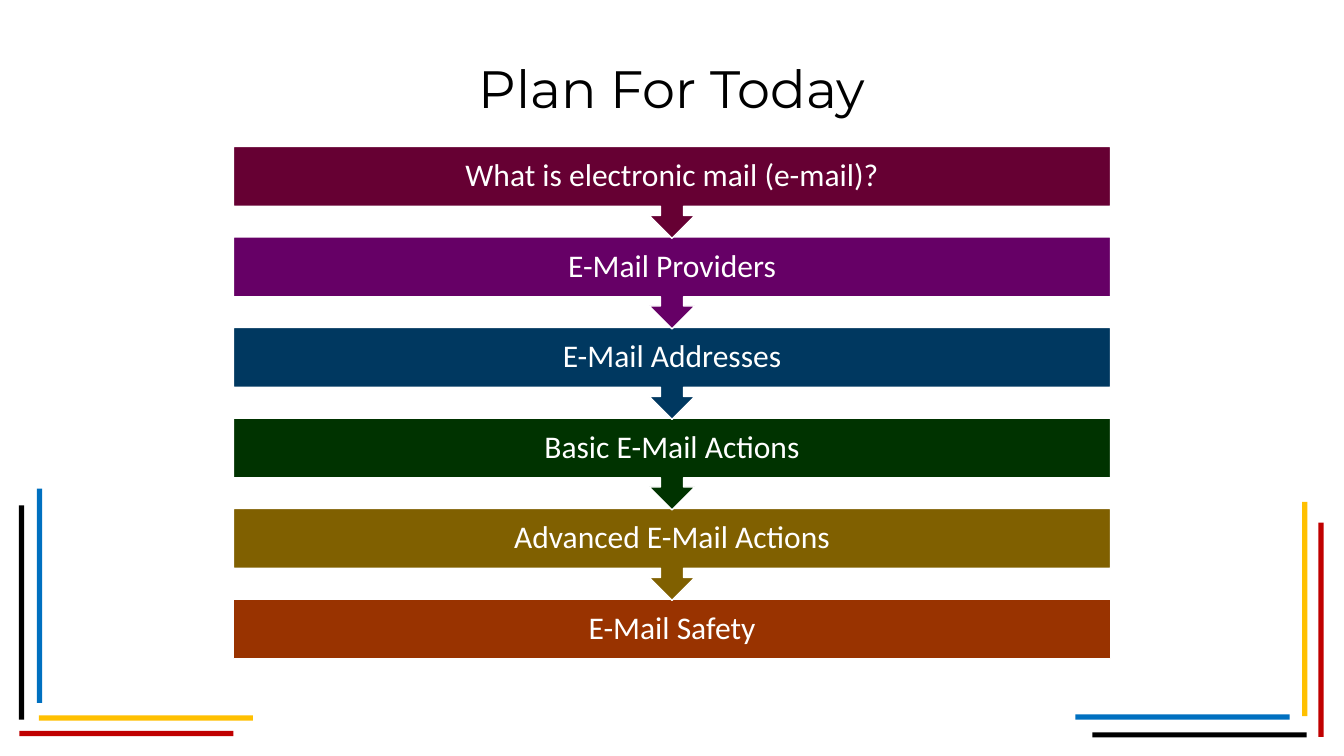
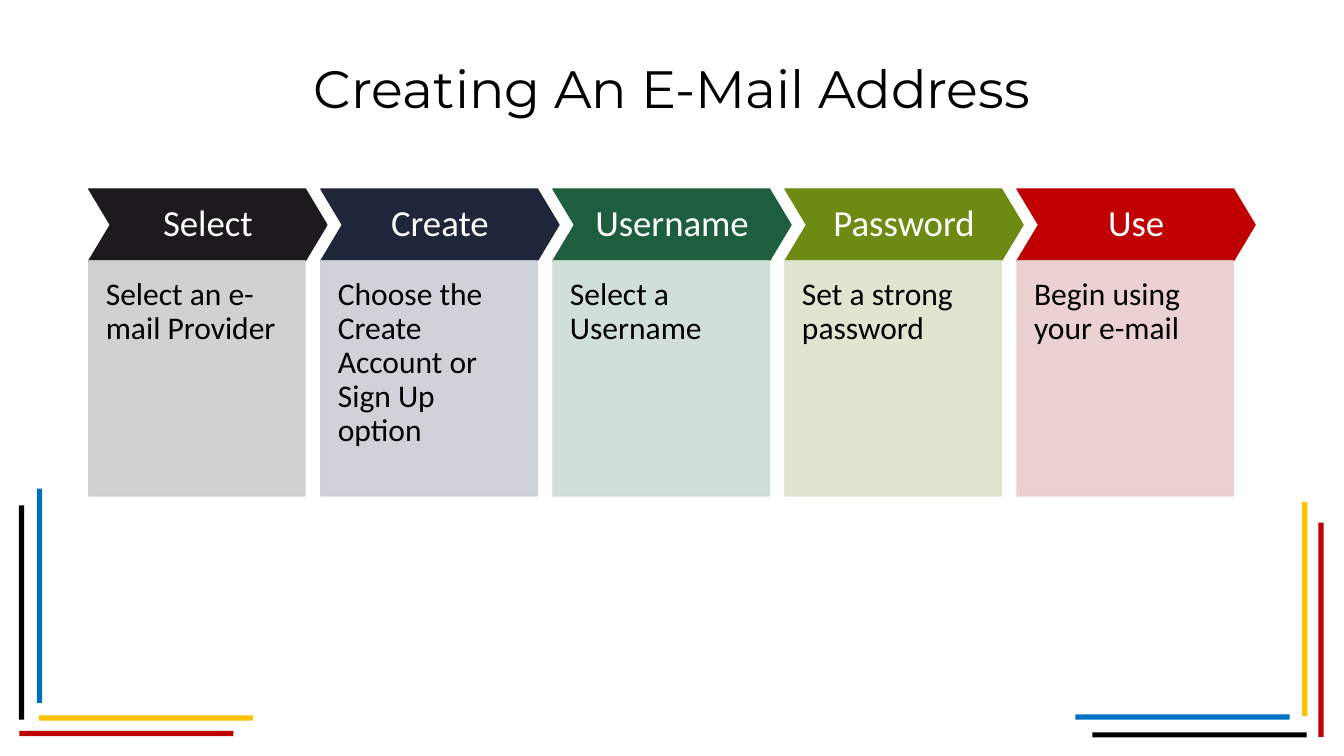
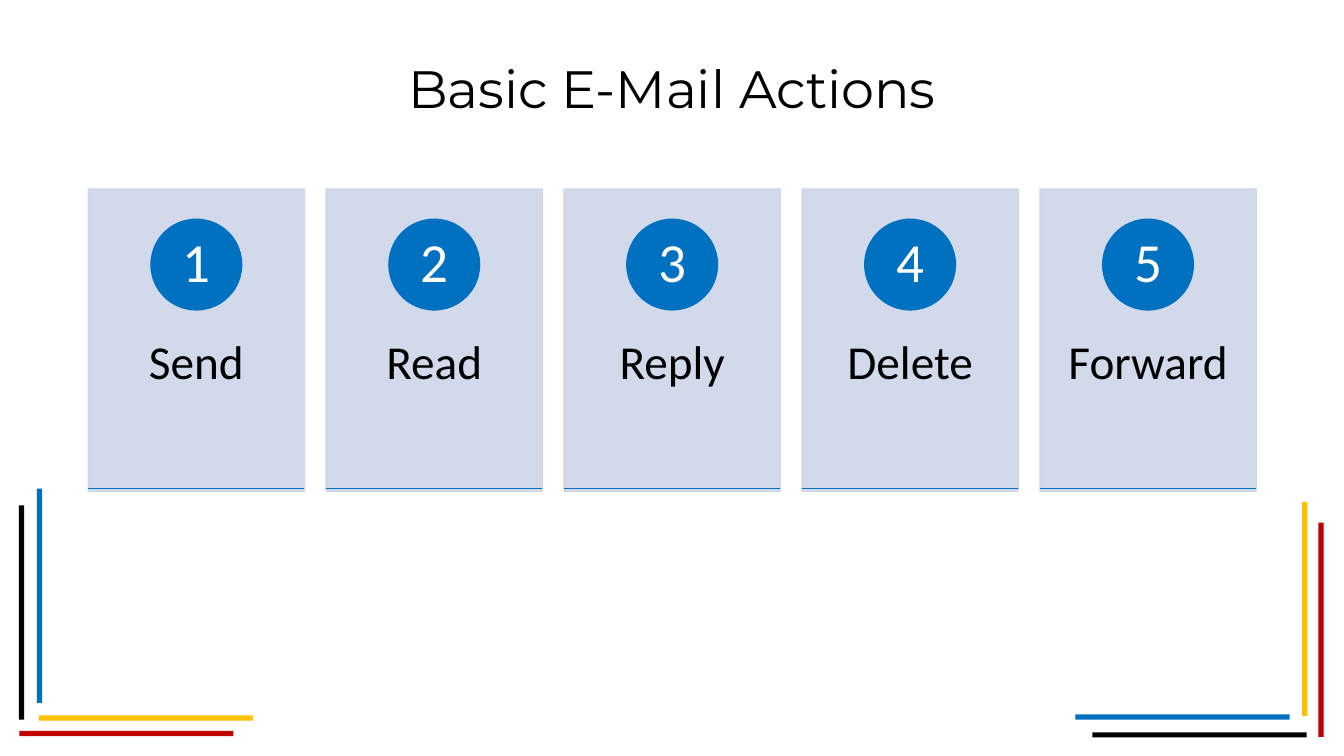
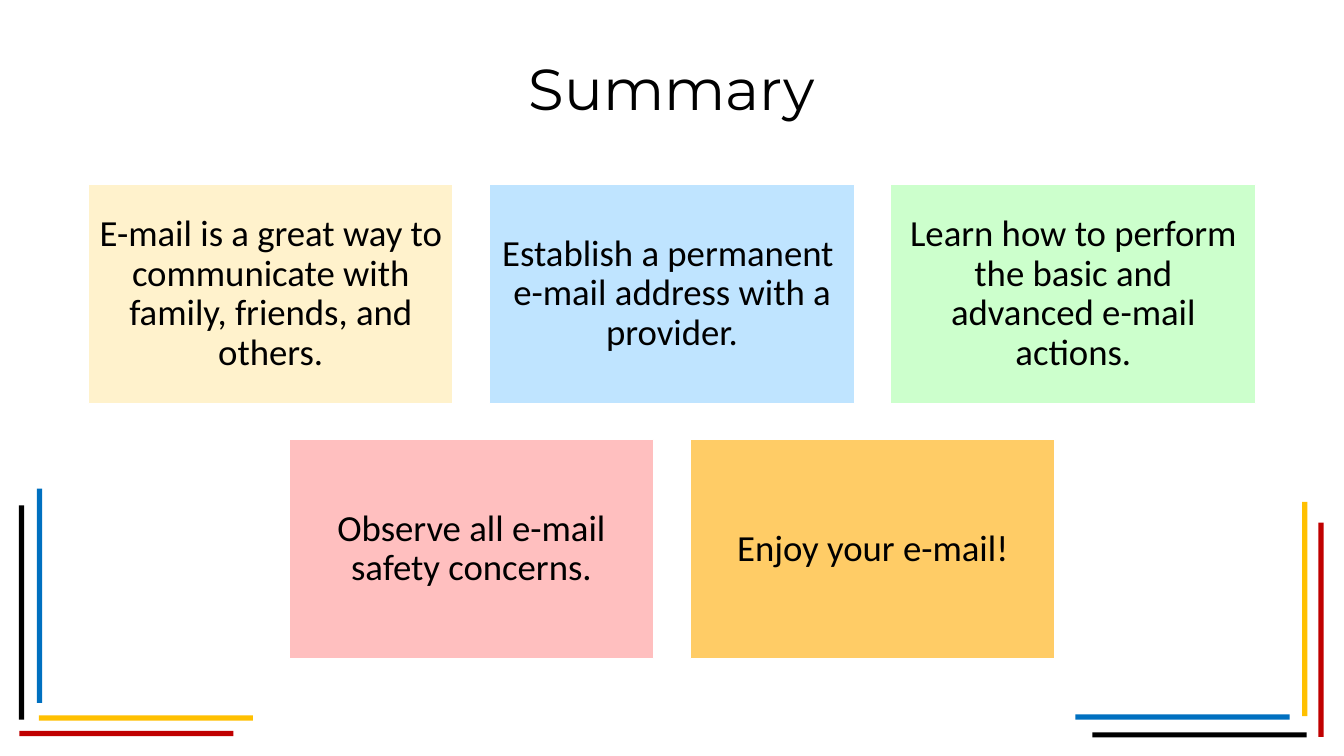
"""Build a four-slide deck about using e-mail."""
from lxml.etree import SubElement
from pptx import Presentation
from pptx.dml.color import RGBColor
from pptx.enum.shapes import MSO_CONNECTOR as Connector, MSO_SHAPE as Shape
from pptx.enum.text import MSO_ANCHOR as Anchor, PP_ALIGN as Align
from pptx.oxml.ns import qn
from pptx.util import Inches, Pt

COLUMNS, ROWS = 64, 36

BLACK = RGBColor(0x00, 0x00, 0x00)
WHITE = RGBColor(0xFF, 0xFF, 0xFF)
RED = RGBColor(0xC0, 0x00, 0x00)
YELLOW = RGBColor(0xFF, 0xC0, 0x00)
BLUE = RGBColor(0x00, 0x70, 0xC0)
MAROON = RGBColor(0x66, 0x00, 0x33)
PURPLE = RGBColor(0x66, 0x00, 0x66)
NAVY = RGBColor(0x00, 0x38, 0x60)
FOREST = RGBColor(0x00, 0x33, 0x00)
OCHRE = RGBColor(0x80, 0x60, 0x00)
RUST = RGBColor(0x99, 0x33, 0x00)
CHARCOAL = RGBColor(0x1D, 0x1A, 0x1D)
MIDNIGHT = RGBColor(0x20, 0x26, 0x3A)
GREEN = RGBColor(0x1D, 0x5E, 0x3E)
OLIVE = RGBColor(0x6D, 0x8B, 0x13)
PALE_GREY = RGBColor(0xCD, 0xCD, 0xCD)
PALE_SLATE = RGBColor(0xCB, 0xCE, 0xD5)
PALE_GREEN = RGBColor(0xCB, 0xDC, 0xD3)
PALE_OLIVE = RGBColor(0xDD, 0xE3, 0xCB)
PALE_RED = RGBColor(0xE9, 0xCC, 0xCC)
PALE_BLUE = RGBColor(0xCC, 0xD5, 0xE8)
CREAM = RGBColor(0xFF, 0xF2, 0xCC)
SKY = RGBColor(0xBF, 0xE4, 0xFF)
MINT = RGBColor(0xCC, 0xFF, 0xCC)
PINK = RGBColor(0xFF, 0xBF, 0xBF)
AMBER = RGBColor(0xFF, 0xCC, 0x66)

BAR_LENGTH, BAR_THICKNESS = 10.2, 0.25
UPRIGHT_BARS = [(0.9, 24.07, BLACK), (1.76, 23.27, BLUE),
                (62.78, 24.89, RED), (62.01, 23.9, YELLOW)]
LEVEL_BARS = [(0.92, 34.81, RED), (1.85, 34.07, YELLOW),
              (52.02, 34.87, BLACK), (51.21, 34.02, BLUE)]

TOPICS = [("What is electronic mail (e-mail)?", MAROON),
          ("E-Mail Providers", PURPLE),
          ("E-Mail Addresses", NAVY),
          ("Basic E-Mail Actions", FOREST),
          ("Advanced E-Mail Actions", OCHRE),
          ("E-Mail Safety", RUST)]
STEPS = [("Select", "Select an e-mail Provider", CHARCOAL, PALE_GREY),
         ("Create", "Choose the Create Account or Sign Up option", MIDNIGHT, PALE_SLATE),
         ("Username", "Select a Username", GREEN, PALE_GREEN),
         ("Password", "Set a strong password", OLIVE, PALE_OLIVE),
         ("Use", "Begin using your e-mail", RED, PALE_RED)]
ACTIONS = ["Send", "Read", "Reply", "Delete", "Forward"]
TAKEAWAYS = [
    [("E-mail is a great way to communicate with family, friends, and others.", CREAM),
     ("Establish a permanent \ne-mail address with a provider.", SKY),
     ("Learn how to perform the basic and advanced e-mail actions.", MINT)],
    [("Observe all e-mail safety concerns.", PINK),
     ("Enjoy your e-mail!", AMBER)],
]


def write(frame, text, *, size, color=BLACK, font="Calibri", align=Align.CENTER,
          anchor=Anchor.MIDDLE, insets=(0.1, 0.05, 0.1, 0.05), spacing=0.9):
    """Fill a text frame with one formatted paragraph."""
    frame.word_wrap = True
    frame.vertical_anchor = anchor
    (frame.margin_left, frame.margin_top,
     frame.margin_right, frame.margin_bottom) = map(Inches, insets)
    paragraph = frame.paragraphs[0]
    paragraph.text = text
    paragraph.alignment = align
    paragraph.line_spacing = spacing
    for run in paragraph.runs:
        run.font.name = font
        run.font.size = Pt(size)
        run.font.color.rgb = color


class Deck:
    """Hold the shared style and the current slide, measured in grid cells."""

    def __init__(self):
        """Start an empty widescreen presentation."""
        self.show = Presentation()
        self.show.slide_width = Inches(14.22)
        self.show.slide_height = Inches(8)
        self.slide = None

    def cells(self, left, top, width, height):
        """Turn grid columns and rows into slide lengths."""
        column = self.show.slide_width / COLUMNS
        row = self.show.slide_height / ROWS
        return (round(left * column), round(top * row),
                round(width * column), round(height * row))

    def page(self, title, size=40, width=54):
        """Add a slide with its corner bars and title."""
        self.slide = self.show.slides.add_slide(self.show.slide_layouts[6])
        for left, top, color in UPRIGHT_BARS:
            self.block((left, top, BAR_THICKNESS, BAR_LENGTH), color)
        for left, top, color in LEVEL_BARS:
            self.block((left, top, BAR_LENGTH, BAR_THICKNESS), color)
        self.label(((COLUMNS - width) / 2, 1.35, width, 5.62), title,
                   size=size, font="Montserrat", spacing=1)

    def block(self, area, fill, line=None, kind=Shape.RECTANGLE, opacity=100):
        """Add a filled preset shape."""
        block = self.slide.shapes.add_shape(kind, *self.cells(*area))
        block.shadow.inherit = False
        block.fill.solid()
        block.fill.fore_color.rgb = fill
        if line is None:
            block.line.fill.background()
        else:
            block.line.color.rgb = line
            block.line.width = Pt(1)
        if opacity < 100:
            for color in block.element.spPr.iter(qn("a:srgbClr")):
                SubElement(color, qn("a:alpha")).set("val", str(opacity * 1000))
        return block

    def label(self, area, text, **style):
        """Add a text box."""
        box = self.slide.shapes.add_textbox(*self.cells(*area))
        write(box.text_frame, text, **style)

    def rule(self, left, top, width, color):
        """Add a level line."""
        x, y, length, _ = self.cells(left, top, width, 0)
        rule = self.slide.shapes.add_connector(Connector.STRAIGHT, x, y, x + length, y)
        rule.line.color.rgb = color
        rule.line.width = Pt(1)
        SubElement(rule.element.spPr, qn("a:effectLst"))


def plan(deck):
    """Show the topics as a chain of arrow callouts."""
    deck.page("Plan For Today", width=58.24)
    left, top, width, height, pitch = 11.12, 6.98, 41.76, 2.83, 4.31
    last = len(TOPICS) - 1
    for index, (topic, color) in reversed(list(enumerate(TOPICS))):
        y = top + index * pitch
        if index == last:
            deck.block((left, y, width, height), color, WHITE)
        else:
            callout = deck.block((left, y, width, 4.37), color, WHITE,
                                 Shape.UP_ARROW_CALLOUT)
            callout.rotation = 180
        deck.label((left, y, width, height), topic, size=24, color=WHITE,
                   insets=(0.19,) * 4)


def address_steps(deck):
    """Show the steps as chevrons with a panel below each."""
    deck.page("Creating An E-Mail Address")
    for index, (step, detail, dark, pale) in enumerate(STEPS):
        left = 4.23 + index * 11.05
        chevron = deck.block((left, 9, 11.34, 3.42), dark, dark, Shape.CHEVRON)
        chevron.adjustments[0] = 0.3
        write(chevron.text_frame, step, size=28, color=WHITE, insets=(0.09,) * 4)
        panel = deck.block((left, 12.42, 10.3, 11.2), pale, pale, opacity=90)
        write(panel.text_frame, detail, size=24, align=Align.LEFT,
              anchor=Anchor.TOP, insets=(0.18, 0.18, 0.18, 0.36))


def basic_actions(deck):
    """Show the actions as numbered cards."""
    deck.page("Basic E-Mail Actions")
    width, diameter = 10.3, 4.32
    for index, action in enumerate(ACTIONS):
        left = 4.2 + index * 11.33
        card = deck.block((left, 9, width, 14.4), PALE_BLUE, PALE_BLUE, opacity=90)
        write(card.text_frame, action, size=36, anchor=Anchor.TOP,
              insets=(0.18, 1.58, 0.18, 0.36))
        badge = deck.block((left + (width - diameter) / 2, 10.44, diameter, diameter),
                           BLUE, BLUE, Shape.OVAL)
        write(badge.text_frame, str(index + 1), size=42, color=WHITE,
              insets=(0.07, 0.01, 0.07, 0.01))
        deck.rule(left, 23.27, width, BLUE)


def summary(deck):
    """Show the takeaways in centred rows of tiles."""
    deck.page("Summary", size=44)
    width, height, pitch = 17.38, 10.44, 19.11
    for row, tiles in enumerate(TAKEAWAYS):
        start = (COLUMNS - width - (len(tiles) - 1) * pitch) / 2
        for column, (takeaway, color) in enumerate(tiles):
            tile = deck.block((start + column * pitch, 8.78 + row * 12.15, width, height),
                              color, WHITE)
            write(tile.text_frame, takeaway, size=28, insets=(0.12,) * 4)


def main():
    """Build every slide and save the deck."""
    deck = Deck()
    for build in (plan, address_steps, basic_actions, summary):
        build(deck)
    deck.show.save("out.pptx")


if __name__ == "__main__":
    main()
